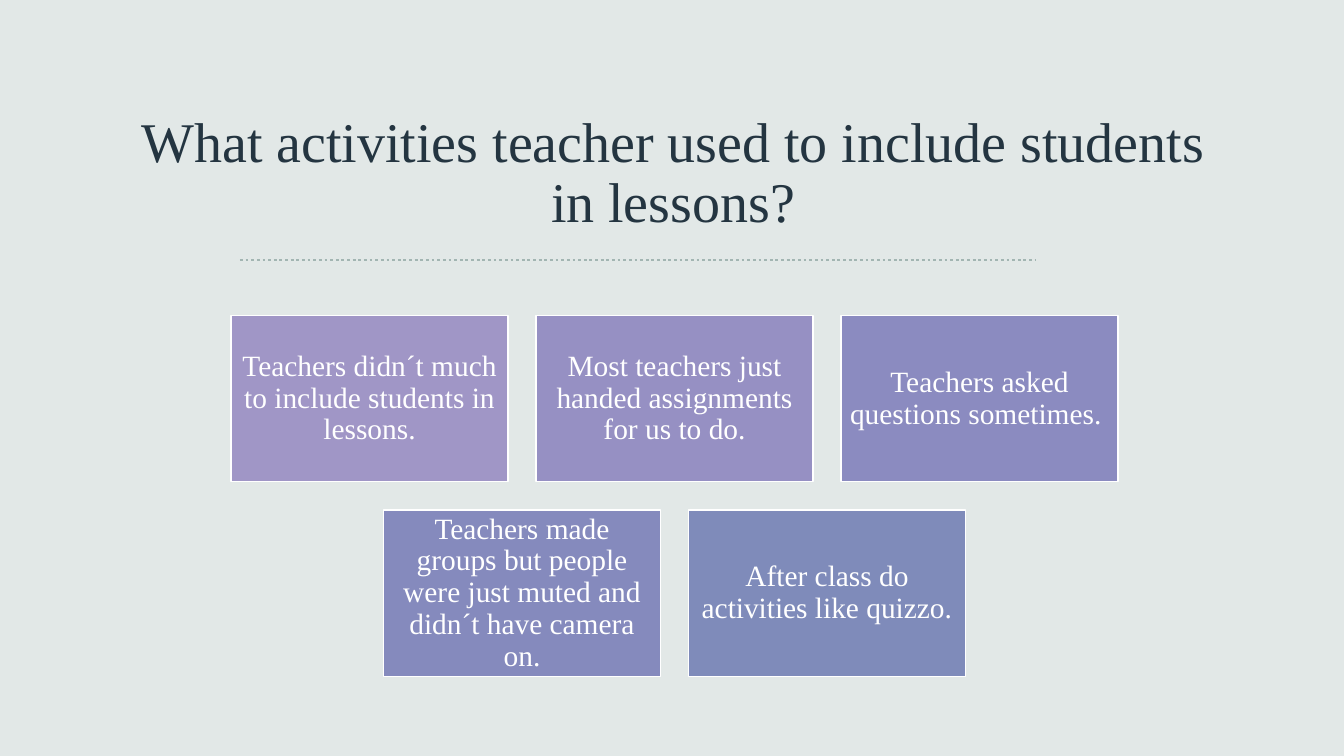
from lxml.etree import SubElement
from pptx import Presentation
from pptx.dml.color import RGBColor
from pptx.enum.dml import MSO_LINE
from pptx.enum.shapes import MSO_CONNECTOR, MSO_SHAPE
from pptx.enum.text import MSO_ANCHOR, PP_ALIGN
from pptx.oxml.ns import qn
from pptx.util import Inches, Pt

MIST = RGBColor(0xE2, 0xE8, 0xE7)
NAVY = RGBColor(0x24, 0x35, 0x41)
SAGE = RGBColor(0xA2, 0xB5, 0xB2)
WHITE = RGBColor(0xFF, 0xFF, 0xFF)
LILAC = RGBColor(0xA0, 0x96, 0xC6)
LAVENDER = RGBColor(0x96, 0x90, 0xC3)
VIOLET = RGBColor(0x8B, 0x8B, 0xC0)
PERIWINKLE = RGBColor(0x85, 0x8A, 0xBD)
BLUE = RGBColor(0x7F, 0x8B, 0xBA)

CARD_WIDTH, CARD_HEIGHT = 2.75, 1.65
COLUMN_STEP, ROW_STEP = 3.025, 1.93
GRID_CENTER, GRID_TOP = 6.69, 3.13

ROWS = [
    [
        ("Teachers didn´t much to include students in lessons.", LILAC),
        ("Most teachers just handed assignments for us to do.", LAVENDER),
        ("Teachers asked questions sometimes. ", VIOLET),
    ],
    [
        ("Teachers made groups but people were just muted and didn´t have camera on.", PERIWINKLE),
        ("After class do activities like quizzo.", BLUE),
    ],
]


def write_text(box, text, size, color, inset):
    frame = box.text_frame
    frame_format = {
        "word_wrap": True,
        "vertical_anchor": MSO_ANCHOR.MIDDLE,
        "margin_left": Inches(inset),
        "margin_right": Inches(inset),
        "margin_top": Inches(inset),
        "margin_bottom": Inches(inset),
    }
    for name, value in frame_format.items():
        setattr(frame, name, value)
    para = frame.paragraphs[0]
    for name, value in {"alignment": PP_ALIGN.CENTER, "line_spacing": 0.9}.items():
        setattr(para, name, value)
    span = para.add_run()
    span.text = text
    for name, value in {"name": "Times New Roman", "size": Pt(size)}.items():
        setattr(span.font, name, value)
    span.font.color.rgb = color


deck = Presentation()
deck.slide_width, deck.slide_height = Inches(13.33), Inches(7.5)
page = deck.slides.add_slide(deck.slide_layouts[6])
page.background.fill.solid()
page.background.fill.fore_color.rgb = MIST

title = page.shapes.add_textbox(Inches(1.05), Inches(1.03), Inches(11.25), Inches(1.4))
write_text(title, "What activities teacher used to include students in lessons?", 40, NAVY, 0.1)

divider = page.shapes.add_connector(
    MSO_CONNECTOR.STRAIGHT, Inches(2.38), Inches(2.58), Inches(10.27), Inches(2.58)
)
divider.line.color.rgb = SAGE
for name, value in {"width": Pt(2), "dash_style": MSO_LINE.ROUND_DOT}.items():
    setattr(divider.line, name, value)
SubElement(divider.element.spPr, qn("a:effectLst"))

for row, cards in enumerate(ROWS):
    row_width = CARD_WIDTH + (len(cards) - 1) * COLUMN_STEP
    row_left = GRID_CENTER - row_width / 2
    for column, (text, color) in enumerate(cards):
        card = page.shapes.add_shape(
            MSO_SHAPE.RECTANGLE,
            Inches(row_left + column * COLUMN_STEP),
            Inches(GRID_TOP + row * ROW_STEP),
            Inches(CARD_WIDTH),
            Inches(CARD_HEIGHT),
        )
        card.shadow.inherit = False
        card.fill.solid()
        card.fill.fore_color.rgb = color
        card.line.color.rgb = WHITE
        card.line.width = Pt(1)
        write_text(card, text, 21, WHITE, 0.09)

deck.save("out.pptx")
